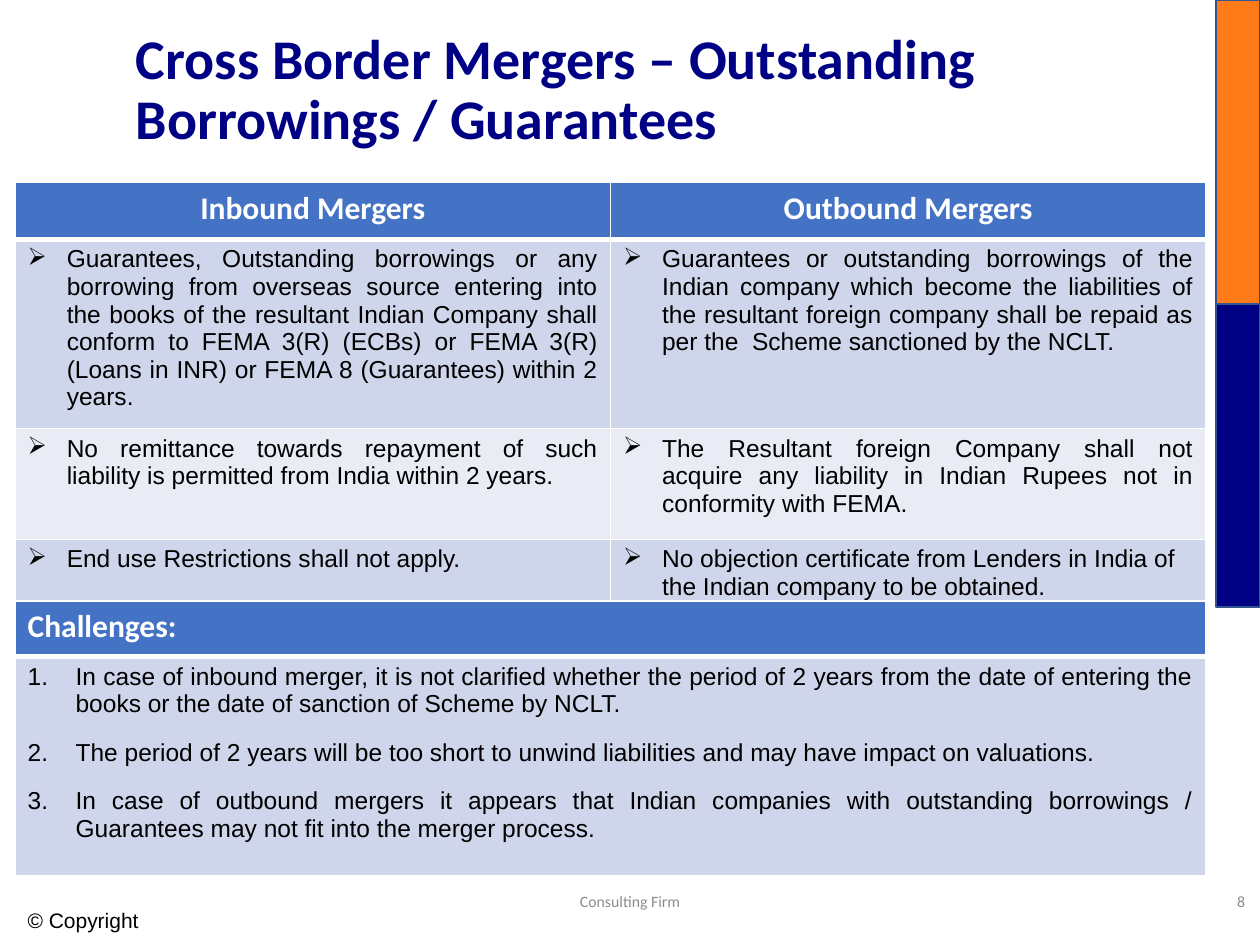
from lxml import etree
from pptx import Presentation
from pptx.dml.color import RGBColor
from pptx.enum.shapes import MSO_SHAPE
from pptx.enum.text import MSO_ANCHOR, PP_ALIGN
from pptx.oxml.ns import qn
from pptx.util import Inches, Pt

LEFT, CENTER, RIGHT, JUSTIFY = (
    PP_ALIGN.LEFT, PP_ALIGN.CENTER, PP_ALIGN.RIGHT, PP_ALIGN.JUSTIFY)
MIDDLE = MSO_ANCHOR.MIDDLE
RECTANGLE = MSO_SHAPE.RECTANGLE

NAVY, ORANGE, OUTLINE = "000085", "FF7B19", "325491"
HEADER, BAND_DARK, BAND_LIGHT = "4472C4", "CFD5EA", "E9EBF5"
WHITE, BLACK, GREY = "FFFFFF", "000000", "8C8C8C"

HEADING = dict(size=18, font="Calibri", color=WHITE, bold=True)
FOOTER = dict(size=9, font="Calibri", color=GREY)
ARROW = ("buChar", {"char": "➢"})
NUMBER = ("buAutoNum", {"type": "arabicPeriod"})

MERGER_ROWS = [
    ("Guarantees, Outstanding borrowings or any borrowing from overseas source "
     "entering into the books of the resultant Indian Company shall conform to "
     "FEMA 3(R) (ECBs) or FEMA 3(R) (Loans in INR) or FEMA 8 (Guarantees) within 2 years.",
     "Guarantees or outstanding borrowings of the Indian company which become the "
     "liabilities of the resultant foreign company shall be repaid as per the  Scheme "
     "sanctioned by the NCLT."),
    ("No remittance towards repayment of such liability is permitted from India "
     "within 2 years.",
     "The Resultant foreign Company shall not acquire any liability in Indian Rupees "
     "not in conformity with FEMA."),
    ("End use Restrictions shall not apply.",
     "No objection certificate from Lenders in India of the Indian company to be obtained."),
]
CHALLENGES = [
    "In case of inbound merger, it is not clarified whether the period of 2 years from "
    "the date of entering the books or the date of sanction of Scheme by NCLT.",
    "The period of 2 years will be too short to unwind liabilities and may have impact "
    "on valuations.",
    "In case of outbound mergers it appears that Indian companies with outstanding "
    "borrowings / Guarantees may not fit into the merger process.",
]


def rgb(value):
    return RGBColor.from_string(value)


def write(paragraph, text, size=14, font="Arial", color=BLACK, bold=False,
          align=LEFT, bullet=None, indent=0, before=None, after=None, spacing=None):
    paragraph.alignment = align
    paragraph.space_before = before
    paragraph.space_after = after
    paragraph.line_spacing = spacing
    if bullet:
        tag, attributes = bullet
        properties = paragraph._p.get_or_add_pPr()
        properties.set("marL", str(Inches(indent)))
        properties.set("indent", str(-Inches(indent)))
        etree.SubElement(properties, qn("a:" + tag), attributes)
    run = paragraph.add_run()
    run.text = text
    run.font.size = Pt(size)
    run.font.name = font
    run.font.bold = bold
    run.font.color.rgb = rgb(color)


def add_label(slide, text, left, top, width, height, **style):
    frame = slide.shapes.add_textbox(
        Inches(left), Inches(top), Inches(width), Inches(height)).text_frame
    frame.word_wrap = True
    frame.vertical_anchor = MIDDLE
    write(frame.paragraphs[0], text, **style)


def add_side_bar(slide, top, color):
    bar = slide.shapes.add_shape(
        RECTANGLE, Inches(9.65), Inches(top), Inches(0.35), Inches(2.41))
    bar.shadow.inherit = False
    bar.fill.solid()
    bar.fill.fore_color.rgb = rgb(color)
    bar.line.color.rgb = rgb(OUTLINE)
    bar.line.width = Pt(1)


def style_cell(cell, fill, top=1, bottom=1):
    properties = cell._tc.get_or_add_tcPr()
    for side, width in (("L", 1), ("R", 1), ("T", top), ("B", bottom)):
        border = etree.SubElement(properties, qn("a:ln" + side), w=str(Pt(width)))
        solid = etree.SubElement(border, qn("a:solidFill"))
        etree.SubElement(solid, qn("a:srgbClr"), val=WHITE)
    cell.fill.solid()
    cell.fill.fore_color.rgb = rgb(fill)


def add_banded_table(slide, top, heights, columns):
    table = slide.shapes.add_table(
        len(heights), columns, Inches(0.12), Inches(top),
        Inches(9.45), Inches(sum(heights))).table
    table.horz_banding = False
    for row_index, height in enumerate(heights):
        table.rows[row_index].height = Inches(height)
        band = BAND_DARK if row_index % 2 else BAND_LIGHT
        for cell in table.rows[row_index].cells:
            style_cell(cell, band if row_index else HEADER,
                       top=3 if row_index == 1 else 1,
                       bottom=1 if row_index else 3)
    return table


def add_merger_table(slide):
    table = add_banded_table(slide, 1.45, [0.45, 1.39, 0.88, 0.6], 2)
    for column, heading in enumerate(("Inbound Mergers", "Outbound Mergers")):
        write(table.cell(0, column).text_frame.paragraphs[0], heading,
              align=CENTER, **HEADING)
    for row, texts in enumerate(MERGER_ROWS, 1):
        align = LEFT if row == len(MERGER_ROWS) else JUSTIFY
        for column, text in enumerate(texts):
            write(table.cell(row, column).text_frame.paragraphs[0], text,
                  align=align, bullet=ARROW, indent=0.31)


def add_challenges_table(slide):
    table = add_banded_table(slide, 4.77, [0.44, 1.74], 1)
    write(table.cell(0, 0).text_frame.paragraphs[0], "Challenges:", **HEADING)
    frame = table.cell(1, 0).text_frame
    for index, challenge in enumerate(CHALLENGES):
        paragraph = frame.add_paragraph() if index else frame.paragraphs[0]
        write(paragraph, challenge, align=JUSTIFY, bullet=NUMBER, indent=0.38,
              before=Pt(6) if index else None, after=Pt(6))


def main():
    presentation = Presentation()
    presentation.slide_width = Inches(10)
    presentation.slide_height = Inches(7.5)
    slide = presentation.slides.add_slide(presentation.slide_layouts[6])
    add_side_bar(slide, 0, ORANGE)
    add_side_bar(slide, 2.41, NAVY)
    add_label(slide, "Cross Border Mergers – Outstanding Borrowings / Guarantees",
              0.98, 0, 8.67, 1.45, size=32, font="Calibri", color=NAVY,
              bold=True, spacing=0.9)
    add_merger_table(slide)
    add_challenges_table(slide)
    add_label(slide, "8", 7.73, 6.95, 2.25, 0.4, align=RIGHT, **FOOTER)
    add_label(slide, "Consulting Firm", 3.31, 6.95, 3.38, 0.4, align=CENTER, **FOOTER)
    add_label(slide, "© Copyright", 0.12, 7.1, 1.65, 0.4, size=12)
    presentation.save("out.pptx")


if __name__ == "__main__":
    main()
